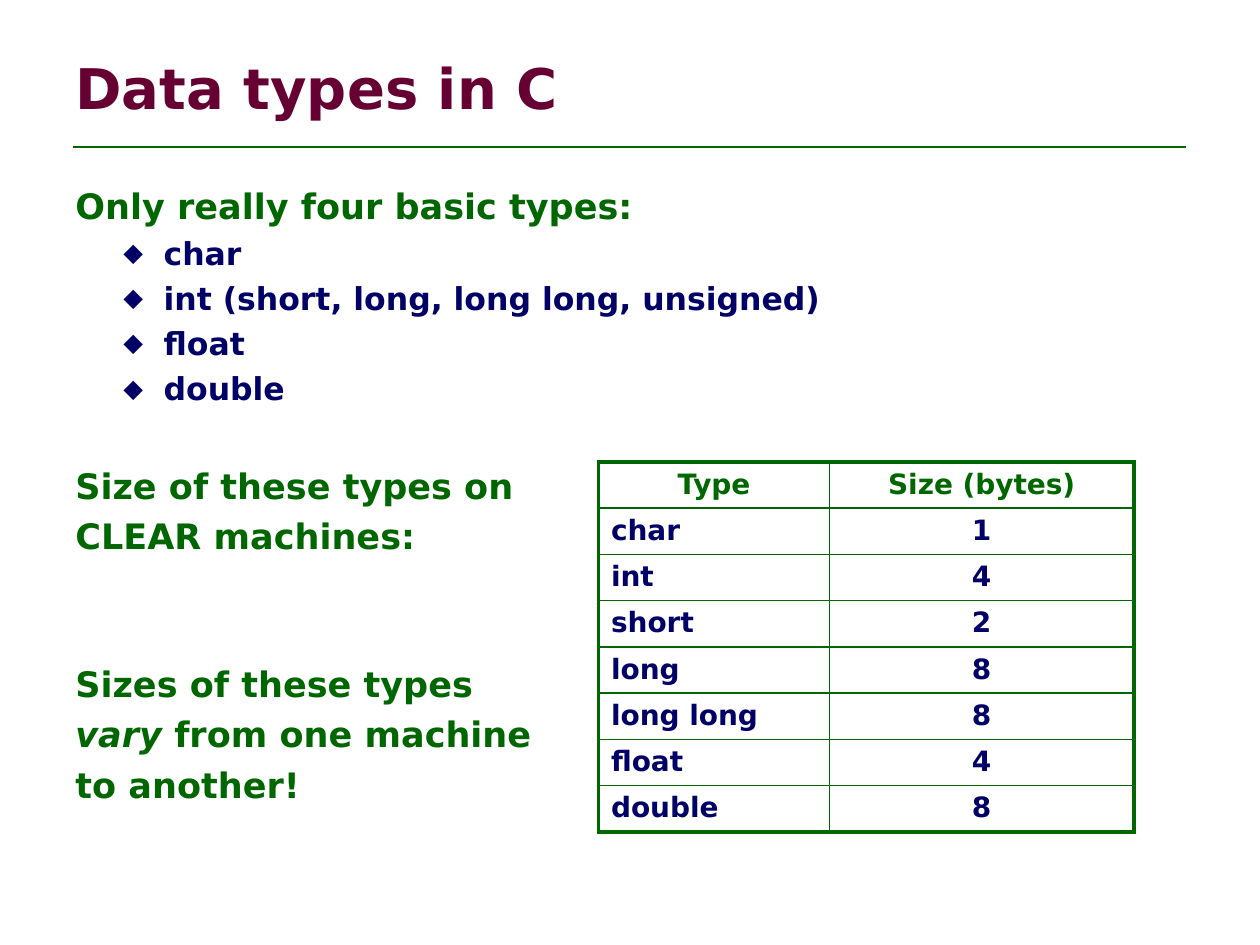
from dataclasses import dataclass

from lxml import etree
from pptx import Presentation
from pptx import util as u
from pptx.dml.color import RGBColor
from pptx.enum import shapes, text
from pptx.oxml import ns

FONT = "DejaVu Sans"
GREEN, NAVY, MAROON = "006600", "000066", "660033"
GRID = u.Inches(1) // 12  # the slide is 120 columns by 90 rows
LINE_GAP = 0.233  # space before a paragraph, as a share of its font size
LINE_PITCH = 1.4  # line height and gap together, as a share of font size
THICK, THIN = 2.25, 1


@dataclass
class Box:
    column: float
    row: float
    width: float
    height: float

    def lengths(self) -> list[int]:
        return [grid(n) for n in (self.column, self.row, self.width, self.height)]


@dataclass
class Line:
    words: str
    bullet: bool = False
    skipped: int = 0  # line heights left free above
    italic_start: str = ""


BODY = [
    Line("Only really four basic types:"),
    Line("char", bullet=True),
    Line("int (short, long, long long, unsigned)", bullet=True),
    Line("float", bullet=True),
    Line("double", bullet=True),
    Line("Size of these types on", skipped=1),
    Line("CLEAR machines:"),
    Line("Sizes of these types", skipped=2),
    Line(" from one machine", italic_start="vary"),
    Line("to another!"),
]
SIZES = [
    ("Type", "Size (bytes)"),
    ("char", "1"),
    ("int", "4"),
    ("short", "2"),
    ("long", "8"),
    ("long long", "8"),
    ("float", "4"),
    ("double", "8"),
]


def grid(count: float) -> int:
    return round(count * GRID)


def color(hex_value: str) -> RGBColor:
    return RGBColor.from_string(hex_value)


def write(paragraph, words: str, *, size: float, fill: str, italic=False, align=None):
    run = paragraph.add_run()
    run.text = words
    font = run.font
    font.name, font.size, font.bold, font.italic = FONT, u.Pt(size), True, italic
    font.color.rgb = color(fill)
    if align is not None:
        paragraph.alignment = align


def add_text_frame(slide, box: Box, anchor):
    frame = slide.shapes.add_textbox(*box.lengths()).text_frame
    frame.word_wrap = True
    frame.vertical_anchor = anchor
    return frame


def add_bullet(paragraph):
    properties = paragraph._p.get_or_add_pPr()
    properties.set("marL", str(u.Inches(0.7)))
    properties.set("indent", str(u.Inches(-0.32)))
    for tag, name, value in (
        ("a:buSzPct", "val", "90000"),
        ("a:buFont", "typeface", FONT),
        ("a:buChar", "char", "⬥"),
    ):
        etree.SubElement(properties, ns.qn(tag)).set(name, value)


def add_body(slide, box: Box, lines: list[Line]):
    frame = add_text_frame(slide, box, text.MSO_ANCHOR.TOP)
    for index, line in enumerate(lines):
        paragraph = frame.add_paragraph() if index else frame.paragraphs[0]
        size, fill = (18, NAVY) if line.bullet else (20, GREEN)
        if index:
            gap = LINE_GAP + line.skipped * LINE_PITCH
            paragraph.space_before = u.Pt(round(size * gap, 2))
        if line.bullet:
            add_bullet(paragraph)
        if line.italic_start:
            write(paragraph, line.italic_start, size=size, fill=fill, italic=True)
        write(paragraph, line.words, size=size, fill=fill)


def add_rule(slide, start: float, end: float, row: float):
    rule = slide.shapes.add_connector(
        shapes.MSO_CONNECTOR.STRAIGHT, grid(start), grid(row), grid(end), grid(row)
    )
    rule.line.color.rgb = color(GREEN)
    rule.line.width = u.Pt(1.5)
    etree.SubElement(rule._element.spPr, ns.qn("a:effectLst"))


def set_borders(cell, widths: dict[str, float]):
    """Draw green borders; they must precede the cell's fill in the XML."""
    properties = cell._tc.get_or_add_tcPr()
    for position, (side, width) in enumerate(widths.items()):
        border = etree.Element(ns.qn(f"a:ln{side}"), w=str(u.Pt(width)))
        solid = etree.SubElement(border, ns.qn("a:solidFill"))
        etree.SubElement(solid, ns.qn("a:srgbClr")).set("val", GREEN)
        properties.insert(position, border)


def add_size_table(slide, box: Box, column_widths: tuple[float, ...]):
    last_row, last_column = len(SIZES) - 1, len(column_widths) - 1
    table = slide.shapes.add_table(
        len(SIZES), len(column_widths), *box.lengths()
    ).table
    table.first_row = table.horz_banding = False
    for column, width in zip(table.columns, column_widths):
        column.width = grid(width)
    for r, values in enumerate(SIZES):
        for c, value in enumerate(values):
            cell = table.cell(r, c)
            cell.fill.background()
            centred = r == 0 or c > 0
            write(
                cell.text_frame.paragraphs[0],
                value,
                size=16,
                fill=NAVY if r else GREEN,
                align=text.PP_ALIGN.CENTER if centred else text.PP_ALIGN.LEFT,
            )
            set_borders(cell, {
                "L": THIN if c else THICK,
                "R": THICK if c == last_column else THIN,
                "T": THIN if r else THICK,
                "B": THICK if r == last_row else THIN,
            })


def main():
    presentation = Presentation()
    presentation.slide_width, presentation.slide_height = grid(120), grid(90)
    slide = presentation.slides.add_slide(presentation.slide_layouts[6])

    add_rule(slide, 7, 113, 14)
    title = add_text_frame(slide, Box(6, 3.6, 108, 9.4), text.MSO_ANCHOR.MIDDLE)
    write(title.paragraphs[0], "Data types in C", size=32, fill=MAROON)
    add_body(slide, Box(6, 17, 86, 63.4), BODY)
    add_size_table(slide, Box(57, 44, 51, 35.2), (22, 29))

    presentation.save("out.pptx")


if __name__ == "__main__":
    main()
